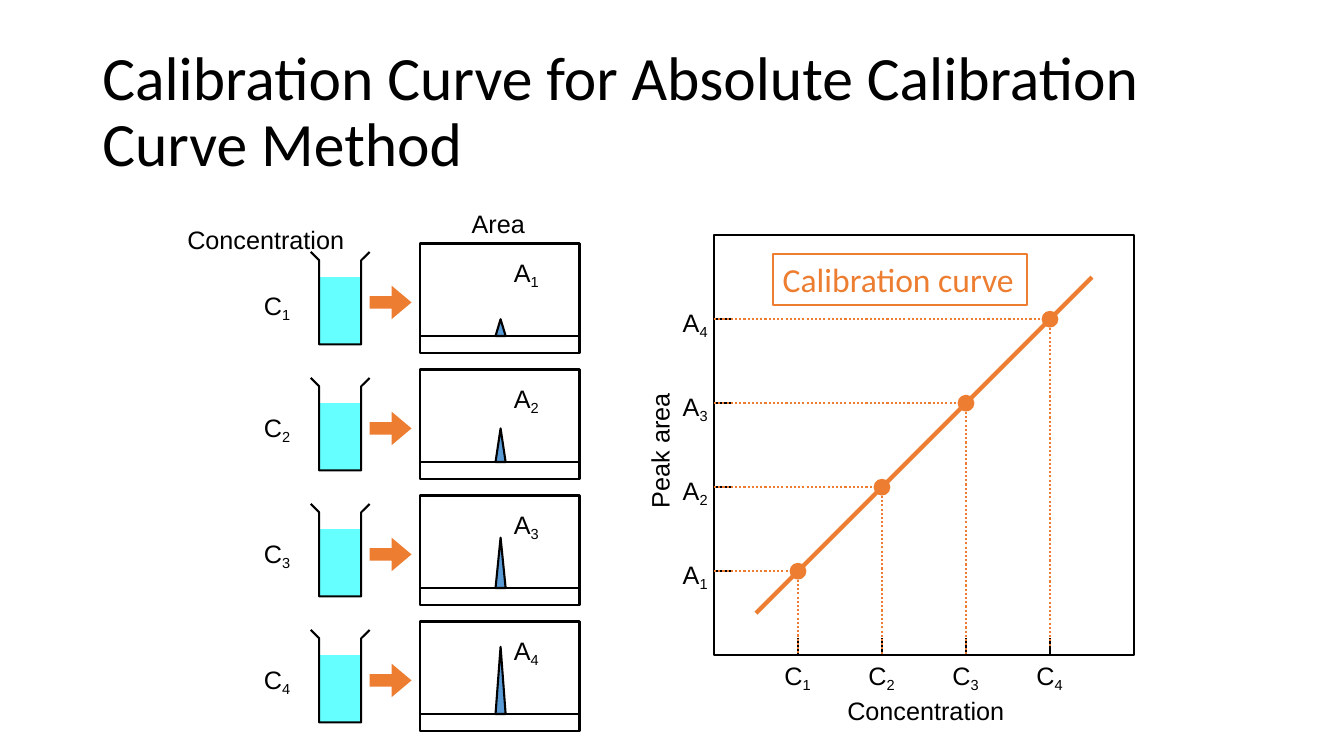
import pptx
import pptx.util
import pptx.dml.color
import pptx.enum.dml
import pptx.enum.shapes
import pptx.enum.text
import lxml.etree

Pt = pptx.util.Pt
PRESET = pptx.enum.shapes.MSO_SHAPE
ALIGN = pptx.enum.text.PP_ALIGN
ANCHOR = pptx.enum.text.MSO_ANCHOR
RGB = pptx.dml.color.RGBColor.from_string

colors = {"ink": "000000", "accent": "ED7D31", "liquid": "66FFFF", "peak": "5B9BD5"}
label_frame = {
    "word_wrap": False,
    "auto_size": pptx.enum.text.MSO_AUTO_SIZE.SHAPE_TO_FIT_TEXT,
    "vertical_anchor": ANCHOR.TOP,
}
label_font = {"name": "Arial", "size": Pt(18)}

deck = pptx.Presentation()
deck.slide_width, deck.slide_height = Pt(960), Pt(540)
slide = deck.slides.add_slide(deck.slide_layouts[6])
shapes = slide.shapes


def paint(shape, fill=None, line=None):
    shape.shadow.inherit = False
    for part, color in ((shape.fill, fill), (shape.line.fill, line)):
        if color:
            part.solid()
            part.fore_color.rgb = RGB(colors[color])
        else:
            part.background()
    if line:
        shape.line.width = Pt(1.5)
    return shape


def write(shape, text, subscript="", align=ALIGN.LEFT, color="ink", font=label_font, frame=label_frame):
    for key, value in frame.items():
        setattr(shape.text_frame, key, value)
    paragraph = shape.text_frame.paragraphs[0]
    paragraph.alignment = align
    for content in filter(None, (text, subscript)):
        run = paragraph.add_run()
        run.text = content
        for key, value in font.items():
            setattr(run.font, key, value)
        run.font.color.rgb = RGB(colors[color])
    if subscript:
        run.font._element.set("baseline", "-20000")
    return shape


title = shapes.add_textbox(Pt(66), Pt(28.8), Pt(828), Pt(104.4))
write(
    title,
    "Calibration Curve for Absolute Calibration Curve Method",
    font={"name": "Calibri", "size": Pt(44)},
    frame={"word_wrap": True, "vertical_anchor": ANCHOR.MIDDLE},
)
title.text_frame.paragraphs[0].line_spacing = 0.9

sample_tops = [174 + 90 * i for i in range(4)]
concentrations = [570 + 60 * i for i in range(4)]
areas = [408 - 60 * i for i in range(4)]

for top in sample_tops:
    paint(shapes.add_shape(PRESET.RECTANGLE, Pt(300), Pt(top), Pt(114), Pt(78)), line="ink")
paint(shapes.add_shape(PRESET.RECTANGLE, Pt(510), Pt(168), Pt(300), Pt(300)), line="ink")

baselines = [(300, top + 66, 414, top + 66, "ink", 1.5) for top in sample_tops]
x_ticks = [(x, 456, x, 468, "ink", 1.5) for x in concentrations]
y_ticks = [(510, y, 522, y, "ink", 1.5) for y in areas]
calibration_curve = (540, 438, 780, 198, "accent", 3)
for x1, y1, x2, y2, color, width in baselines + x_ticks + y_ticks + [calibration_curve]:
    line = shapes.add_connector(
        pptx.enum.shapes.MSO_CONNECTOR.STRAIGHT, Pt(x1), Pt(y1), Pt(x2), Pt(y2)
    )
    line.line.color.rgb = RGB(colors[color])
    line.line.width = Pt(width)
    lxml.etree.SubElement(line._element.spPr, pptx.oxml.ns.qn("a:effectLst"))

for i, (top, x, y) in enumerate(zip(sample_tops, concentrations, areas)):
    number = str(i + 1)
    peak_height = 12 * (i + 1)
    label_top = top + (30 if i == 0 else 27)
    guide_end = 462 if i == 3 else 468

    for preset, left, upper, width, height, fill, line in (
        (PRESET.RECTANGLE, 228, top + 24, 30, 48, "liquid", None),
        (PRESET.ISOSCELES_TRIANGLE, 354, top + 66 - peak_height, 7.2, peak_height, "peak", "ink"),
        (PRESET.RIGHT_ARROW, 264, top + 30, 30, 24, "accent", None),
        (PRESET.OVAL, x - 6, y - 6, 12, 12, "accent", None),
    ):
        part = shapes.add_shape(preset, Pt(left), Pt(upper), Pt(width), Pt(height))
        paint(part, fill, line)
        if preset == PRESET.RIGHT_ARROW:
            part.adjustments[0], part.adjustments[1] = 0.375, 0.594

    beaker = [(222, top + 6), (228, top + 12), (228, top + 72),
              (258, top + 72), (258, top + 12), (264, top + 6)]
    guide = [(510, y), (x, y), (x, guide_end)]
    for points, color in ((beaker, "ink"), (guide, "accent")):
        builder = shapes.build_freeform(*points[0], scale=Pt(1))
        builder.add_line_segments(points[1:], close=False)
        outline = paint(builder.convert_to_shape(), line=color)
        if points is guide:
            outline.line.dash_style = pptx.enum.dml.MSO_LINE.ROUND_DOT

    for letter, left, upper, width, align in (
        ("C", 181.4, label_top, 34.6, ALIGN.LEFT),
        ("A", 360, top + 6, 33.1, ALIGN.LEFT),
        ("C", x - 17.6, 468, 34.6, ALIGN.CENTER),
        ("A", 479.5, y - 12, 33.1, ALIGN.RIGHT),
    ):
        label = shapes.add_textbox(Pt(left), Pt(upper), Pt(width), Pt(28.8))
        write(label, letter, number, align)

for text, left, top, width, align, rotation in (
    ("Concentration", 126.7, 157, 127.4, ALIGN.LEFT, 0),
    ("Area", 329.8, 145.4, 52.6, ALIGN.LEFT, 0),
    ("Concentration", 597.6, 493.2, 127.4, ALIGN.CENTER, 0),
    ("Peak area", 422.6, 307.4, 97.2, ALIGN.CENTER, 270),
):
    heading = shapes.add_textbox(Pt(left), Pt(top), Pt(width), Pt(28.8))
    heading.rotation = rotation
    write(heading, text, align=align)

curve_name = shapes.add_shape(PRESET.RECTANGLE, Pt(552), Pt(181.4), Pt(181.4), Pt(36.4))
paint(curve_name, line="accent")
write(curve_name, "Calibration curve", color="accent", font={"name": "Calibri", "size": Pt(24)})

deck.save("out.pptx")
